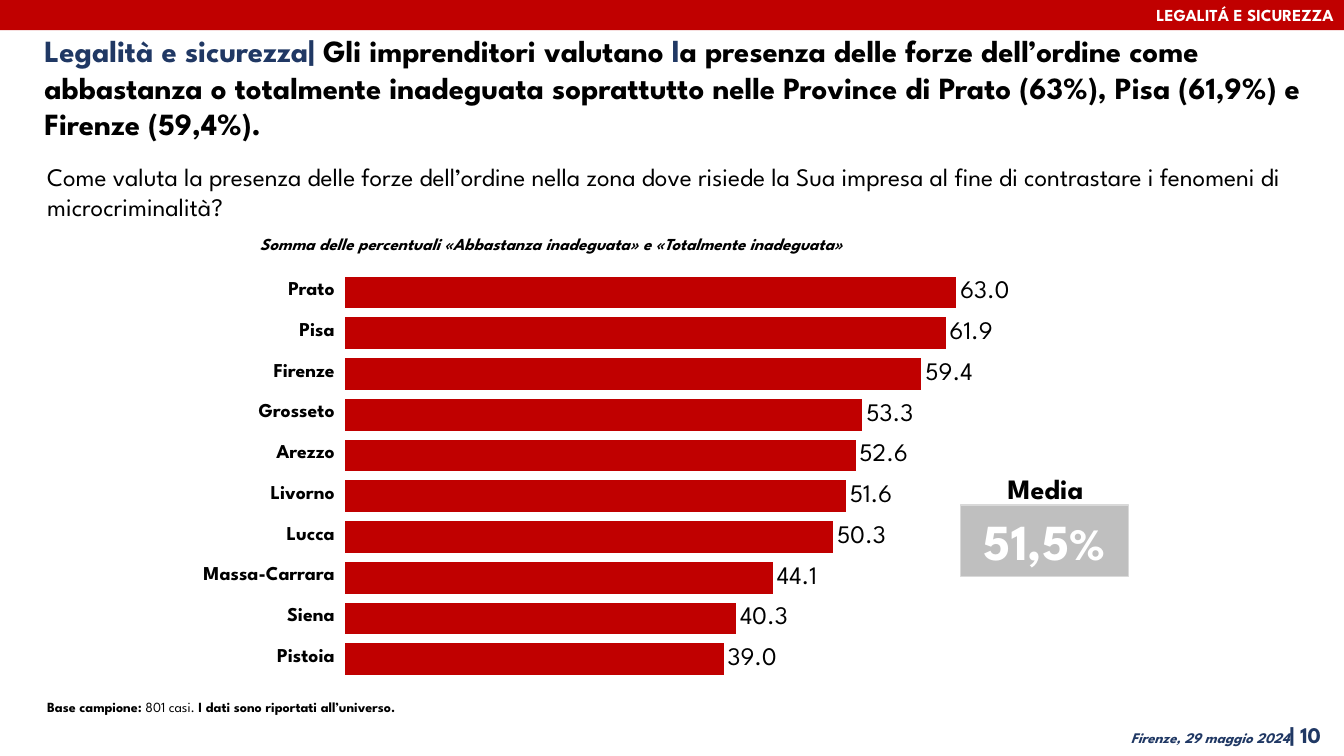
import pptx
import pptx.chart.data
import pptx.dml.color
import pptx.enum.chart
import pptx.enum.shapes
import pptx.enum.text
import pptx.oxml
import pptx.util
from pptx.util import Inches

RED, NAVY, BLACK, WHITE = "C00000", "203864", "000000", "FFFFFF"
FONT = "League Spartan"
LEFT = pptx.enum.text.PP_ALIGN.LEFT
CENTER = pptx.enum.text.PP_ALIGN.CENTER
RIGHT = pptx.enum.text.PP_ALIGN.RIGHT
MIDDLE = pptx.enum.text.MSO_ANCHOR.MIDDLE
RECTANGLE = pptx.enum.shapes.MSO_SHAPE.RECTANGLE

PROVINCES = {
    "Prato": 63, "Pisa": 61.9, "Firenze": 59.4, "Grosseto": 53.3, "Arezzo": 52.6,
    "Livorno": 51.6, "Lucca": 50.3, "Massa-Carrara": 44.1, "Siena": 40.3, "Pistoia": 39,
}


def rgb(color):
    return pptx.dml.color.RGBColor.from_string(color)


def write(text_frame, *runs, size, color=BLACK, bold=False, italic=False, align=LEFT):
    """Fill the frame with one paragraph; a run is a text or (text, changed formats)."""
    text_frame.word_wrap = True
    paragraph = text_frame.paragraphs[0]
    paragraph.alignment = align
    for item in runs:
        text, changes = (item, {}) if isinstance(item, str) else item
        run = paragraph.add_run()
        run.text = text
        run.font.name = FONT
        run.font.size = pptx.util.Pt(changes.get("size", size))
        run.font.bold = changes.get("bold", bold)
        run.font.italic = changes.get("italic", italic)
        run.font.color.rgb = rgb(changes.get("color", color))


presentation = pptx.Presentation()
presentation.slide_width = Inches(13.33)
presentation.slide_height = Inches(7.5)
slide = presentation.slides.add_slide(presentation.slide_layouts[5])
shapes = slide.shapes

# Title
title = shapes.title
title.left, title.top, title.width, title.height = (
    Inches(0.37), Inches(0.27), Inches(12.68), Inches(1.19))
title_frame = title.text_frame
title_frame.auto_size = pptx.enum.text.MSO_AUTO_SIZE.NONE
title_frame.vertical_anchor = pptx.enum.text.MSO_ANCHOR.TOP
title_frame.margin_left = title_frame.margin_right = Inches(0.07)
title_frame.margin_top = title_frame.margin_bottom = Inches(0.04)
write(
    title_frame,
    ("Legalità e sicurezza| ", {"color": NAVY}),
    "Gli imprenditori valutano ",
    ("l", {"color": NAVY}),
    "a presenza delle forze dell’ordine come abbastanza o totalmente inadeguata "
    "soprattutto nelle Province di Prato (63%), Pisa (61,9%) e Firenze (59,4%).",
    size=22, bold=True)

# Bar chart
chart_data = pptx.chart.data.CategoryChartData(number_format="0.0")
chart_data.categories = [str(rank) for rank in range(1, len(PROVINCES) + 1)]
chart_data.add_series("Series 1", list(PROVINCES.values()))
chart = shapes.add_chart(
    pptx.enum.chart.XL_CHART_TYPE.BAR_CLUSTERED,
    Inches(2.96), Inches(2.44), Inches(7.37), Inches(4.56), chart_data).chart
chart.has_legend = False
chart.has_title = False
chart.font.name = "Calibri"
chart.font.size = pptx.util.Pt(10)
chart.font.color.rgb = rgb(BLACK)
chart.category_axis.visible = False
chart.category_axis.reverse_order = True
chart.value_axis.visible = False
chart.value_axis.has_major_gridlines = False
chart.value_axis.minimum_scale = 0
chart.value_axis.maximum_scale = 70

plot = chart.plots[0]
plot.gap_width = 28
plot.vary_by_categories = False
bars = plot.series[0]
bars.format.fill.solid()
bars.format.fill.fore_color.rgb = rgb(RED)
labels = bars.data_labels
labels.show_value = True
labels.position = pptx.enum.chart.XL_LABEL_POSITION.OUTSIDE_END
labels.number_format = "0.0"
labels.number_format_is_linked = False
labels.font.name = FONT
labels.font.size = pptx.util.Pt(18)
labels.font.color.rgb = rgb(BLACK)

plot_area = chart.element.chart.plotArea
for automatic_layout in plot_area.xpath("c:layout"):
    plot_area.remove(automatic_layout)
plot_area.insert(0, pptx.oxml.parse_xml(
    '<c:layout xmlns:c="http://schemas.openxmlformats.org/drawingml/2006/chart">'
    '<c:manualLayout><c:layoutTarget val="inner"/>'
    '<c:xMode val="edge"/><c:yMode val="edge"/>'
    '<c:x val="0.063"/><c:y val="0.057"/><c:w val="0.914"/><c:h val="0.887"/>'
    '</c:manualLayout></c:layout>'))

# Province names beside the bars
first_top, last_top = 2.72, 6.36
row_pitch = (last_top - first_top) / (len(PROVINCES) - 1)
for index, province in enumerate(PROVINCES):
    table = shapes.add_table(
        1, 1, Inches(0.13), Inches(first_top + index * row_pitch),
        Inches(3.2), Inches(0.32)).table
    table.first_row = False
    table.horz_banding = False
    cell = table.cell(0, 0)
    cell.fill.background()
    cell.vertical_anchor = MIDDLE
    cell.margin_left = cell.margin_right = cell.margin_top = Inches(0.01)
    cell.margin_bottom = 0
    write(cell.text_frame, province, size=14, bold=True, align=RIGHT)

# Header band and average value
header_band = shapes.add_shape(RECTANGLE, 0, 0, Inches(13.33), Inches(0.3))
average_box = shapes.add_shape(
    RECTANGLE, Inches(9.53), Inches(5.01), Inches(1.66), Inches(0.71))
for shape, fill_color in ((header_band, RED), (average_box, "BFBFBF")):
    shape.shadow.inherit = False
    shape.fill.solid()
    shape.fill.fore_color.rgb = rgb(fill_color)
    shape.text_frame.vertical_anchor = MIDDLE
header_band.line.fill.background()
average_box.line.color.rgb = rgb("D9D9D9")
average_box.line.width = pptx.util.Pt(0.75)
write(header_band.text_frame, "LEGALITÁ E SICUREZZA",
      size=12, color=WHITE, bold=True, align=RIGHT)
write(average_box.text_frame, "51,5", ("%", {"size": 32}),
      size=36, color=WHITE, bold=True, align=CENTER)

# Text boxes: position, runs, format
text_boxes = [
    ((0.37, 1.55, 12.72, 0.71),
     ["Come valuta la presenza delle forze dell’ordine nella zona dove risiede la Sua "
      "impresa al fine di contrastare i fenomeni di microcriminalità?"],
     {"size": 18}),
    ((2.48, 2.27, 6.82, 0.3),
     ["Somma delle percentuali «Abbastanza inadeguata» e «Totalmente inadeguata»"],
     {"size": 12, "bold": True, "italic": True}),
    ((9.68, 4.63, 1.38, 0.44), ["Media"], {"size": 20, "bold": True, "align": CENTER}),
    ((0.37, 6.88, 10.93, 0.27),
     ["Base campione: ", ("801 casi. ", {"bold": False}),
      "I dati sono riportati all’universo."],
     {"size": 10, "bold": True}),
    ((6.27, 7.11, 6.93, 0.37),
     ["Firenze, 29 maggio 2024", ("| 10", {"size": 16, "italic": False})],
     {"size": 10.5, "color": NAVY, "bold": True, "italic": True, "align": RIGHT}),
]
for position, runs, text_format in text_boxes:
    text_box = shapes.add_textbox(*map(Inches, position))
    write(text_box.text_frame, *runs, **text_format)

presentation.save("out.pptx")
